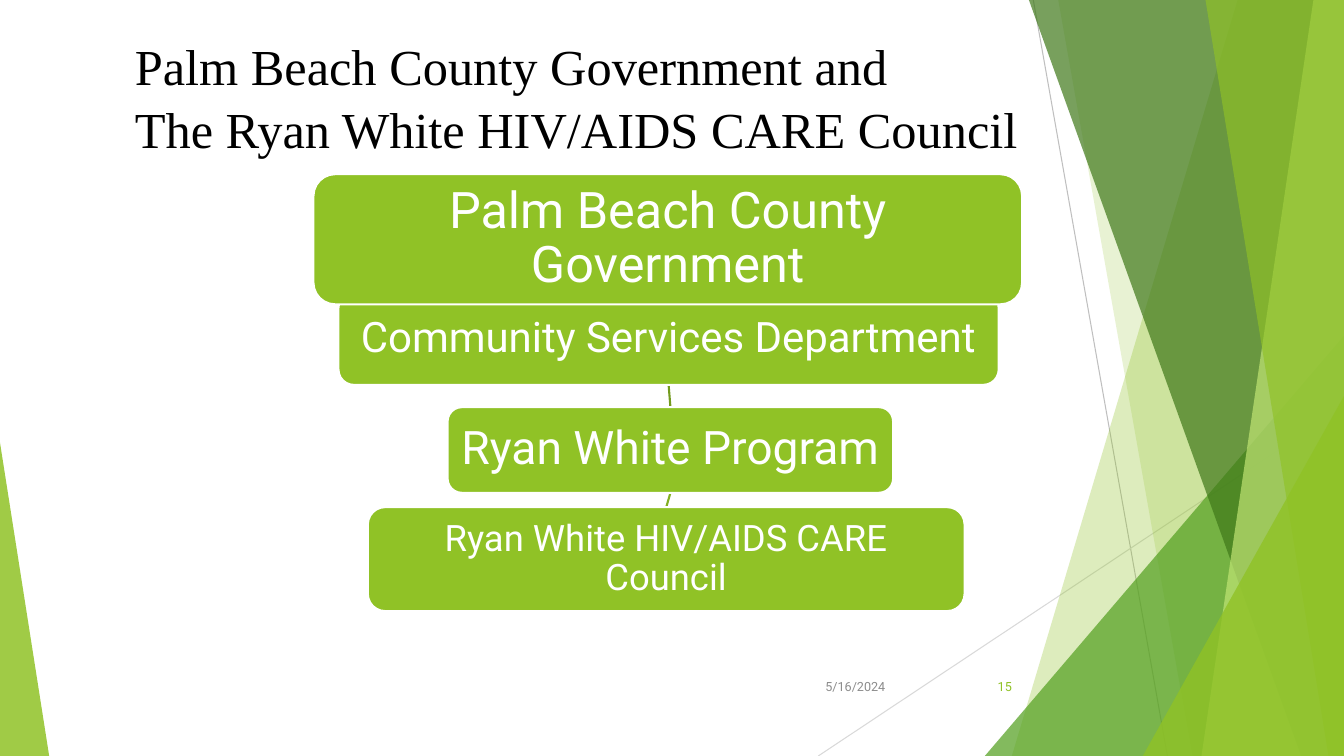
from lxml import etree
from pptx import Presentation
from pptx.dml.color import RGBColor
from pptx.enum.shapes import MSO_CONNECTOR as CONN, MSO_SHAPE as SHAPE
from pptx.enum.text import MSO_ANCHOR as ANCHOR, PP_ALIGN as ALIGN
from pptx.oxml.ns import qn
from pptx.util import Cm, Pt

LIME = RGBColor(0x90, 0xC2, 0x26)
GREEN = RGBColor(0x54, 0xA0, 0x21)
FOREST = RGBColor(0x3F, 0x78, 0x19)
PALE = RGBColor(0xC0, 0xE4, 0x74)
OLIVE = RGBColor(0x73, 0x9B, 0x1E)
MOSS = RGBColor(0x83, 0xB0, 0x22)
GRAY = RGBColor(0x8C, 0x8C, 0x8C)
SILVER = RGBColor(0xBF, 0xBF, 0xBF)
LIGHT = RGBColor(0xD9, 0xD9, 0xD9)
WHITE = RGBColor(0xFF, 0xFF, 0xFF)
BLACK = RGBColor(0, 0, 0)
W, H = 33.87, 19.05

prs = Presentation()
prs.slide_width, prs.slide_height = Cm(W), Cm(H)
s = prs.slides.add_slide(prs.slide_layouts[6])
shapes = s.shapes


def ribbon(top, bottom):
    fb = shapes.build_freeform(Cm(top), 0)
    fb.add_line_segments([(Cm(W), 0), (Cm(W), Cm(H)), (Cm(bottom), Cm(H))])
    return fb.convert_to_shape()


def wedge(x, y, w, apex):
    sp = shapes.add_shape(SHAPE.ISOSCELES_TRIANGLE, Cm(x), Cm(y), Cm(w), Cm(H - y))
    sp.adjustments[0] = apex
    return sp


lines = []
for x1, y1, x2, y2, color, width in [
    (26.04, 0, 29.42, H, SILVER, 0.75),
    (W, 10.24, 20.62, H, LIGHT, 0.75),
    (16.85, 9.7, 16.89, 10.26, OLIVE, 1.5),
    (16.89, 12.42, 16.79, 12.78, MOSS, 1.5),
]:
    line = shapes.add_connector(CONN.STRAIGHT, Cm(x1), Cm(y1), Cm(x2), Cm(y2))
    line.line.color.rgb = color
    line.line.width = Pt(width)
    etree.SubElement(line._element.spPr, qn("a:effectLst"))
    lines.append(line)

for sp, color, opacity in [
    (ribbon(31.19, 25.5), LIME, 30),
    (ribbon(26.67, 30.05), LIME, 20),
    (wedge(24.82, 8.46, 9.05, 1), GREEN, 72),
    (ribbon(25.93, 32.79), FOREST, 70),
    (ribbon(33.1, 30.28), PALE, 70),
    (ribbon(30.38, 33.48), LIME, 65),
    (wedge(28.8, 9.98, 5.07, 1), LIME, 80),
    (wedge(0, 11.15, 1.24, 0), LIME, 85),
]:
    sp.shadow.inherit = False
    sp.line.fill.background()
    sp.fill.solid()
    sp.fill.fore_color.rgb = color
    clr = sp._element.spPr.find(qn("a:solidFill"))[0]
    etree.SubElement(clr, qn("a:alpha"), val=str(opacity * 1000))

tf = shapes.add_textbox(Cm(3.15), Cm(0.76), Cm(29.41), Cm(3.3)).text_frame
tf.word_wrap = True
tf.text = "Palm Beach County Government and\nThe Ryan White HIV/AIDS CARE Council"
for p in tf.paragraphs:
    p.font.name, p.font.size = "Times New Roman", Pt(36)
    p.font.color.rgb = BLACK
tf.paragraphs[1].space_before = Pt(2)

boxes = []
for text, x, y, w, h, size, inset in [
    ("Community Services Department", 8.53, 7.37, 16.64, 2.33, 30, 0.2),
    ("Palm Beach County Government", 7.9, 4.39, 17.86, 3.28, 36, 0.25),
    ("Ryan White Program", 11.28, 10.26, 11.23, 2.16, 33, 0.22),
    ("Ryan White HIV/AIDS CARE Council", 9.27, 12.78, 15.04, 2.62, 26, 0.18),
]:
    sp = shapes.add_shape(SHAPE.ROUNDED_RECTANGLE, Cm(x), Cm(y), Cm(w), Cm(h))
    sp.shadow.inherit = False
    sp.fill.solid()
    sp.fill.fore_color.rgb = LIME
    sp.line.color.rgb = WHITE
    sp.line.width = Pt(1.5)
    tf = sp.text_frame
    tf.word_wrap = True
    tf.vertical_anchor = ANCHOR.MIDDLE
    tf.margin_left = tf.margin_right = tf.margin_top = tf.margin_bottom = Cm(inset)
    p = tf.paragraphs[0]
    p.text = text
    p.alignment = ALIGN.CENTER
    p.line_spacing = 0.9
    p.font.name, p.font.size = "Roboto", Pt(size)
    p.font.color.rgb = WHITE
    boxes.append(sp)

department, county, program, council = boxes
for line, upper, lower in [
    (lines[2], department, program),
    (lines[3], program, council),
]:
    line.begin_connect(upper, 2)
    line.end_connect(lower, 0)

for text, x, w, color in [("5/16/2024", 20.02, 2.54, GRAY), ("15", 23.85, 1.9, LIME)]:
    tf = shapes.add_textbox(Cm(x), Cm(16.79), Cm(w), Cm(1.02)).text_frame
    tf.word_wrap = True
    tf.vertical_anchor = ANCHOR.MIDDLE
    p = tf.paragraphs[0]
    p.text = text
    p.alignment = ALIGN.RIGHT
    p.font.name, p.font.size = "Roboto", Pt(9)
    p.font.color.rgb = color

prs.save("out.pptx")
